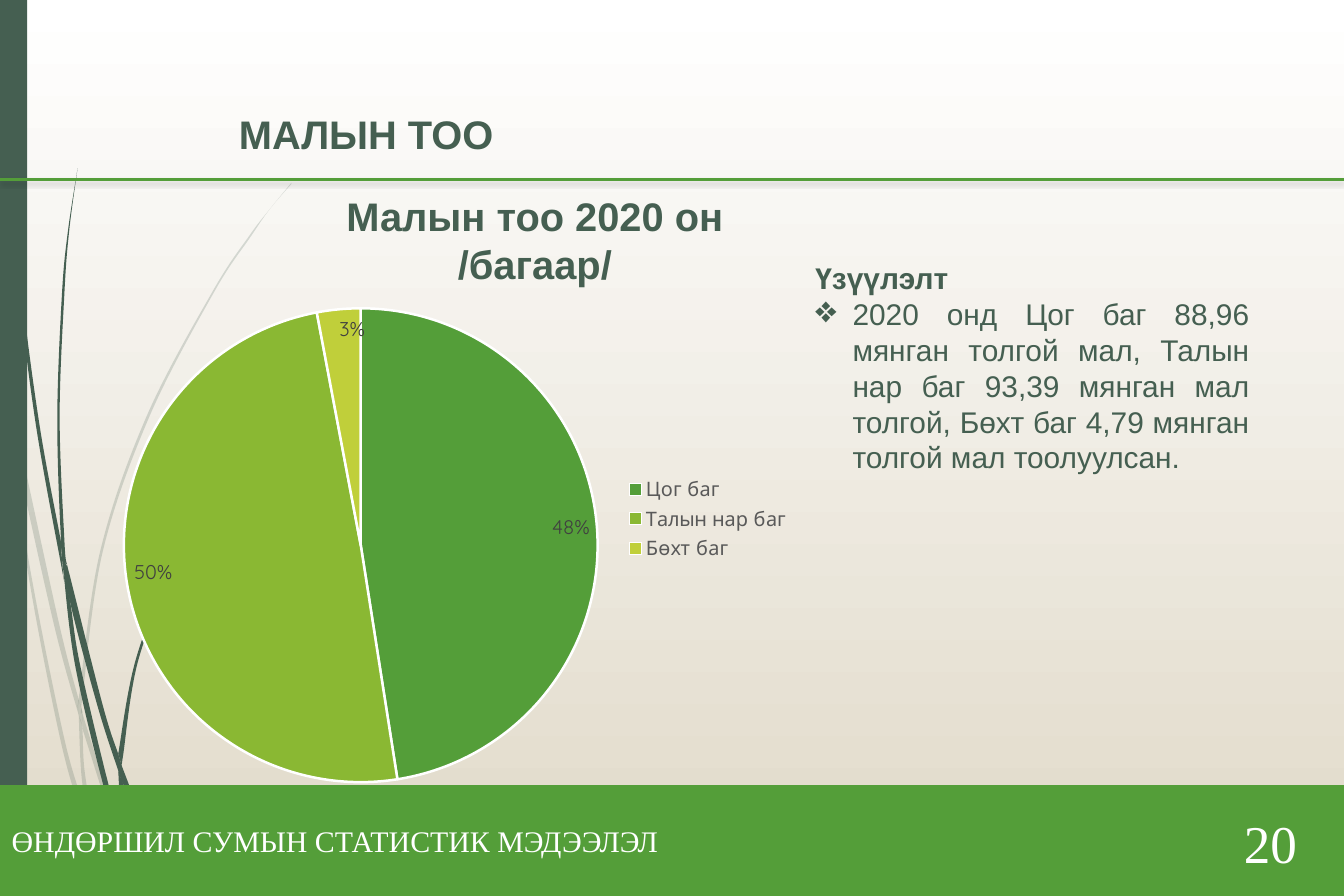
from lxml.etree import SubElement
from pptx import Presentation
from pptx.chart.data import CategoryChartData
from pptx.dml.color import RGBColor
from pptx.enum.chart import XL_CHART_TYPE as ChartType, XL_LABEL_POSITION as LabelPosition, XL_LEGEND_POSITION as LegendPosition
from pptx.enum.shapes import MSO_CONNECTOR as Connector, MSO_SHAPE as Shape
from pptx.enum.text import MSO_ANCHOR as Anchor, PP_ALIGN as Align
from pptx.oxml import parse_xml
from pptx.oxml.ns import nsdecls, qn
from pptx.util import Cm, Pt

PINE = RGBColor(0x45, 0x5F, 0x51)
GREEN = RGBColor(0x54, 0x9E, 0x39)
LIME = RGBColor(0x8A, 0xB8, 0x33)
YELLOW = RGBColor(0xC0, 0xCF, 0x3A)
WHITE = RGBColor(0xFF, 0xFF, 0xFF)
SAND = RGBColor(0xE0, 0xD9, 0xC8)
LABEL_GRAY = RGBColor(0x40, 0x40, 0x40)
LEGEND_GRAY = RGBColor(0x59, 0x59, 0x59)

WIDTH, HEIGHT = 28.58, 19.05
FOOTER_TOP, RULE_TOP = 16.71, 3.81

HEADING = {"size": Pt(24), "name": "Arial", "bold": True}
LEAD = {"size": Pt(18), "name": "Arial", "bold": True}
BODY = {"size": Pt(18), "name": "Arial", "bold": False}
FOOTER = {"size": Pt(18), "name": "Times New Roman"}
NUMBER = {"size": Pt(32), "name": "Times New Roman"}
CHART_TEXT = {"size": Pt(12), "name": "Quicksand", "bold": False}

CHART_TITLE = "Малын тоо 2020 он\v/багаар/"
SLIDE_TITLE = "МАЛЫН ТОО"
FOOTER_TEXT = "ӨНДӨРШИЛ СУМЫН СТАТИСТИК МЭДЭЭЛЭЛ"
NOTE_TITLE = "Үзүүлэлт"
NOTE = ("2020 онд Цог баг 88,96 мянган толгой мал, Талын нар баг 93,39 мянган мал "
        "толгой, Бөхт баг 4,79 мянган толгой мал тоолуулсан.")
HERD = [("Цог баг", 48, GREEN), ("Талын нар баг", 50, LIME), ("Бөхт баг", 3, YELLOW)]
PIE_LAYOUT = {"x": 0.116, "y": 0.099, "w": 0.617, "h": 0.901}

GRASS_UNIT = Cm(0.0254)
FINE = 100
PALE_GRASS = [
    ([(9, 350), (7, 322), (0, 282)], [(0, 299), (8, 344), (9, 350)]),
    ([(11, 345), (49, 520), (66, 586)], [(66, 599), (45, 522), (13, 376), (11, 345)]),
    ([(69, 596), (72, 607), (99, 692), (121, 751)], [(118, 751), (96, 694), (69, 610)]),
    ([(82, 711), (97, 751)], [(93, 751), (82, 711)]),
    ([(9, 350), (22, 470), (51, 621), (72, 693), (79, 714)],
     [(77, 707), (73, 683), (54, 619), (24, 469), (13, 376), (9, 350)]),
    ([(66, 599), (68, 646), (73, 683), (75, 692), (82, 711)], [(81, 706), (71, 646), (69, 610), (66, 599)]),
    ([(244, 153), (226, 175), (209, 197), (178, 244), (123, 348), (84, 461), (66, 584), (66, 586)],
     [(69, 596), (69, 584), (86, 462), (125, 349), (179, 245), (210, 198), (226, 175), (244, 154)]),
    ([(79, 714), (89, 751)], [(93, 751), (79, 714)]),
    ([(66, 586), (66, 599)], [(69, 608), (69, 596), (66, 586)]),
    ([(73, 683), (77, 707), (79, 714), (93, 751)], [(82, 711), (75, 692), (73, 683)]),
]
SOLID_GRASS = [
    ([(3, 0), (3, 48), (6, 110), (15, 233), (30, 355), (52, 477), (53, 481)],
     [(51, 457), (51, 453), (33, 355), (17, 232), (7, 109), (4, 48), (3, 0)]),
    ([(56, 472), (86, 590), (99, 631)], [(99, 645), (82, 592), (59, 505), (56, 472)]),
    ([(102, 641), (105, 649), (127, 706), (146, 749)], [(141, 749), (123, 708), (103, 656), (102, 641)]),
    ([(53, 477), (63, 557), (87, 659), (103, 708), (109, 722)],
     [(108, 717), (102, 691), (91, 657), (67, 556), (59, 505), (53, 477)]),
    ([(65, 141), (57, 193), (52, 245), (48, 349), (51, 449), (55, 472)],
     [(56, 472), (54, 453), (50, 349), (54, 245), (58, 193), (65, 141)]),
    ([(113, 719), (127, 749)], [(124, 749), (113, 719)]),
    ([(51, 449), (51, 453), (53, 477), (59, 505)], [(56, 472), (55, 472), (51, 449)]),
    ([(242, 344), (228, 358), (215, 373), (189, 405), (145, 474), (114, 551), (99, 631)],
     [(102, 641), (103, 633), (116, 552), (147, 476), (190, 406), (215, 374), (229, 359), (243, 344)]),
    ([(109, 722), (118, 749)], [(121, 749), (109, 722)]),
    ([(99, 645), (102, 691), (108, 706), (113, 719)], [(112, 716), (103, 656), (101, 651), (99, 645)]),
    ([(99, 631), (99, 645), (103, 656)], [(102, 641), (99, 631)]),
    ([(102, 691), (108, 717), (109, 722), (121, 749)], [(124, 749), (113, 719), (108, 706), (102, 691)]),
]


def paint(shape, color, opacity=100):
    shape.shadow.inherit = False
    shape.fill.solid()
    shape.fill.fore_color.rgb = color
    shape.line.fill.background()
    if opacity < 100:
        color_node = shape.fill._xPr.find(qn("a:solidFill"))[0]
        SubElement(color_node, qn("a:alpha"), val=str(opacity * 1000))


def curve_controls(edge):
    padded = [edge[0], *edge, edge[-1]]
    for before, start, end, after in zip(padded, padded[1:], padded[2:], padded[3:]):
        yield (tuple(s + (e - b) / 6 for b, s, e in zip(before, start, end)),
               tuple(e - (a - s) / 6 for s, e, a in zip(start, end, after)), end)


def add_blade(slide, edges, opacity):
    near, far = [[(x * FINE, y * FINE) for x, y in edge] for edge in edges]
    left, top = map(min, zip(*near, *far))
    builder = slide.shapes.build_freeform(*near[0], scale=GRASS_UNIT / FINE)
    builder.add_line_segments(near[1:] + far, close=True)
    shape = builder.convert_to_shape()
    lines = list(shape._element.iter(qn("a:lnTo")))
    curves = [*curve_controls(near), None, *curve_controls(far)]
    for line, curve in zip(lines, curves):
        if curve:
            line.tag = qn("a:cubicBezTo")
            line.remove(line[0])
            for x, y in curve:
                SubElement(line, qn("a:pt"), x=str(round(x - left)), y=str(round(y - top)))
    paint(shape, PINE, opacity)


def set_font(font, style, color):
    for name, value in style.items():
        setattr(font, name, value)
    font.color.rgb = color


def write(paragraph, text, style, color, align=Align.LEFT):
    paragraph.text = text
    paragraph.alignment = align
    for run in paragraph.runs:
        set_font(run.font, style, color)


def add_text(slide, box, text, style, color, align, anchor):
    frame = slide.shapes.add_textbox(*map(Cm, box)).text_frame
    frame.word_wrap = True
    frame.vertical_anchor = anchor
    write(frame.paragraphs[0], text, style, color, align)
    return frame


def add_rule(slide):
    rule = slide.shapes.add_connector(Connector.STRAIGHT, 0, Cm(RULE_TOP), Cm(WIDTH), Cm(RULE_TOP))
    rule.line.color.rgb = GREEN
    rule.line.width = Pt(1.75)
    rule._element.spPr.append(parse_xml(
        f'<a:effectLst {nsdecls("a")}><a:outerShdw blurRad="38100" dist="25400" dir="5400000">'
        '<a:srgbClr val="000000"><a:alpha val="25000"/></a:srgbClr></a:outerShdw></a:effectLst>'))


def add_note(slide):
    frame = add_text(slide, (17.09, 5.4, 9.73, 4.88), NOTE_TITLE, LEAD, PINE, Align.LEFT, Anchor.TOP)
    paragraph = frame.add_paragraph()
    write(paragraph, NOTE, BODY, PINE, Align.JUSTIFY)
    properties = paragraph._p.get_or_add_pPr()
    properties.set("marL", str(Cm(0.79)))
    properties.set("indent", str(-Cm(0.79)))
    SubElement(properties, qn("a:buSzPct"), val="125000")
    SubElement(properties, qn("a:buChar"), char="❖")


def add_pie(slide):
    data = CategoryChartData()
    data.categories = [name for name, _, _ in HERD]
    data.add_series("Series 1", [share for _, share, _ in HERD])
    chart = slide.shapes.add_chart(ChartType.PIE, *map(Cm, (0.74, 5.33, 16.33, 11.4)), data).chart
    chart.has_title = False
    chart.has_legend = True
    chart.legend.position = LegendPosition.RIGHT
    chart.legend.include_in_layout = False
    for font in (chart.font, chart.legend.font):
        set_font(font, CHART_TEXT, LEGEND_GRAY)
    plot = chart.plots[0]
    plot.vary_by_categories = True
    for index, (_, _, color) in enumerate(HERD):
        look = plot.series[0].points[index].format
        look.fill.solid()
        look.fill.fore_color.rgb = color
        look.line.color.rgb = WHITE
        look.line.width = Pt(1.5)
    labels = plot.series[0].data_labels
    label_format = {"show_value": False, "show_percentage": True, "number_format": "0%",
                    "number_format_is_linked": False, "position": LabelPosition.INSIDE_END}
    for name, value in label_format.items():
        setattr(labels, name, value)
    set_font(labels.font, CHART_TEXT, LABEL_GRAY)
    area = chart._chartSpace.chart.plotArea
    for old in area.findall(qn("c:layout")):
        area.remove(old)
    sizes = "".join(f'<c:{key} val="{value}"/>' for key, value in PIE_LAYOUT.items())
    area.insert(0, parse_xml(
        f'<c:layout {nsdecls("c")}><c:manualLayout><c:layoutTarget val="inner"/>'
        f'<c:xMode val="edge"/><c:yMode val="edge"/>{sizes}</c:manualLayout></c:layout>'))


def main():
    presentation = Presentation()
    presentation.slide_width, presentation.slide_height = Cm(WIDTH), Cm(HEIGHT)
    slide = presentation.slides.add_slide(presentation.slide_layouts[6])
    background = slide.background.fill
    background.gradient()
    background.gradient_angle = 270
    for stop, color in zip(background.gradient_stops, (WHITE, SAND)):
        stop.color.rgb = color
    for blades, opacity in ((PALE_GRASS, 20), (SOLID_GRASS, 100)):
        for edges in blades:
            add_blade(slide, edges, opacity)
    paint(slide.shapes.add_shape(Shape.RECTANGLE, 0, 0, Cm(0.58), Cm(HEIGHT)), PINE)
    add_text(slide, (3.02, 3.51, 16.71, 2.72), CHART_TITLE, HEADING, PINE, Align.CENTER, Anchor.BOTTOM)
    add_rule(slide)
    footer = slide.shapes.add_shape(Shape.RECTANGLE, 0, Cm(FOOTER_TOP), Cm(WIDTH), Cm(HEIGHT - FOOTER_TOP))
    paint(footer, GREEN)
    footer.line.color.rgb = GREEN
    footer.line.width = Pt(1.25)
    write(footer.text_frame.paragraphs[0], FOOTER_TEXT, FOOTER, WHITE)
    add_text(slide, (20.59, 17.18, 7.24, 1.45), "20", NUMBER, WHITE, Align.RIGHT, Anchor.MIDDLE)
    add_note(slide)
    add_pie(slide)
    heading = add_text(slide, (4.83, 0.76, 16.71, 2.72), SLIDE_TITLE, HEADING, PINE, Align.LEFT, Anchor.BOTTOM)
    heading.paragraphs[0].line_spacing = 0.9
    presentation.save("out.pptx")


if __name__ == "__main__":
    main()
